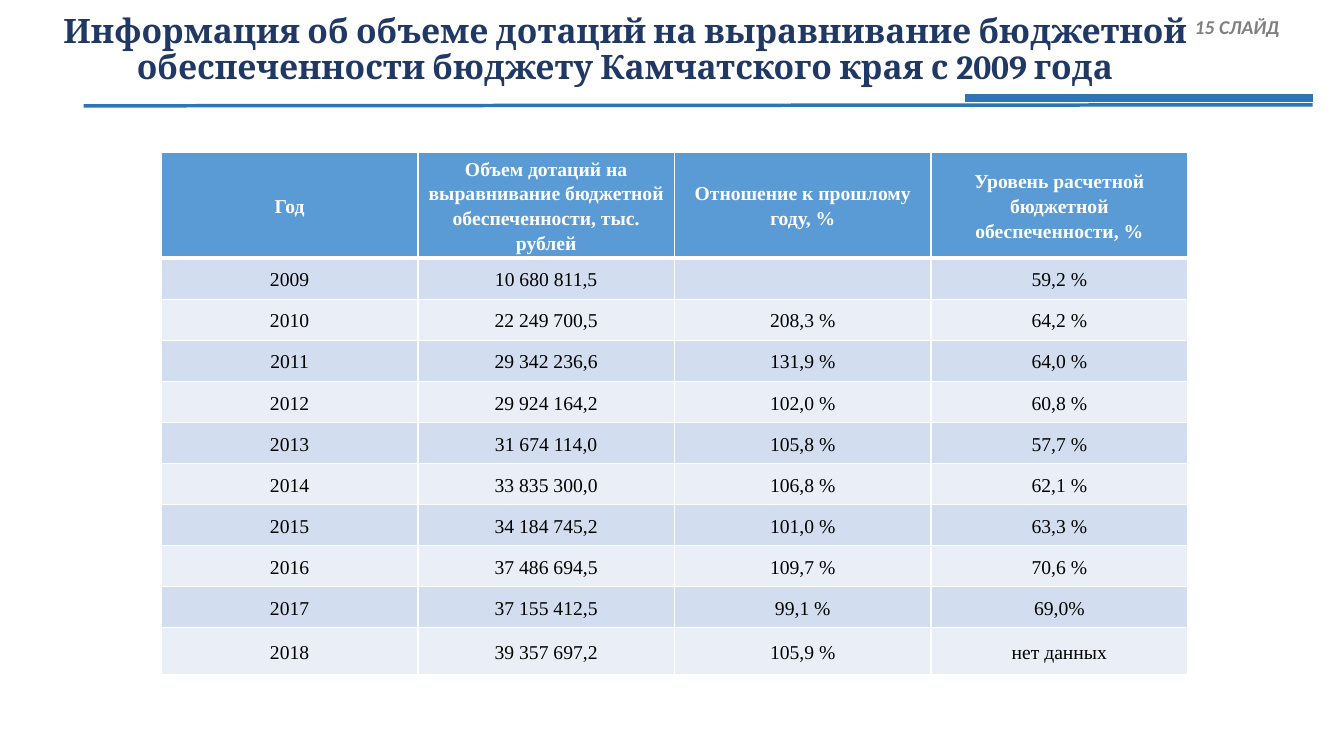
from dataclasses import dataclass

from lxml import etree
from pptx import Presentation
from pptx import util as u
from pptx.dml.color import RGBColor
from pptx.enum import shapes, text
from pptx.oxml import ns


@dataclass(frozen=True)
class Theme:
    title: str = "203864"
    rule: str = "2E75B6"
    header: str = "5B9BD5"
    bands: tuple = ("D2DEEF", "EAEFF7")
    white: str = "FFFFFF"
    black: str = "000000"
    grey: str = "808080"
    title_font: str = "Cambria"
    table_font: str = "Times New Roman"
    number_font: str = "Calibri"
    title_size: int = 24
    text_size: int = 14


THEME = Theme()
TITLE = "Информация об объеме дотаций на выравнивание бюджетной обеспеченности бюджету Камчатского края с 2009 года"
HEADINGS = (
    "Год",
    "Объем дотаций на выравнивание бюджетной обеспеченности, тыс. рублей",
    "Отношение к прошлому году, %",
    "Уровень расчетной бюджетной обеспеченности, %",
)
GRANTS = (
    ("2009", "10 680 811,5", "", "59,2 %"),
    ("2010", "22 249 700,5", "208,3 %", "64,2 %"),
    ("2011", "29 342 236,6", "131,9 %", "64,0 %"),
    ("2012", "29 924 164,2", "102,0 %", "60,8 %"),
    ("2013", "31 674 114,0", "105,8 %", "57,7 %"),
    ("2014", "33 835 300,0", "106,8 %", "62,1 %"),
    ("2015", "34 184 745,2", "101,0 %", "63,3 %"),
    ("2016", "37 486 694,5", "109,7 %", "70,6 %"),
    ("2017", "37 155 412,5", "99,1 %", "69,0%"),
    ("2018", "39 357 697,2", "105,9 %", "нет данных"),
)


def apply(target, **values):
    for name, value in values.items():
        setattr(target, name, value)


def write(paragraph, words, color, **font_values):
    run = paragraph.add_run()
    run.text = words
    apply(run.font, **font_values)
    run.font.color.rgb = RGBColor.from_string(color)


def add_title(slide, left, top, width, height):
    title = slide.shapes.title
    apply(title, left=u.Inches(left), top=u.Inches(top),
          width=u.Inches(width), height=u.Inches(height))
    apply(title.text_frame, word_wrap=True, vertical_anchor=text.MSO_ANCHOR.MIDDLE)
    paragraph = title.text_frame.paragraphs[0]
    apply(paragraph, alignment=text.PP_ALIGN.CENTER, line_spacing=0.9)
    write(paragraph, TITLE, THEME.title, name=THEME.title_font,
          size=u.Pt(THEME.title_size), bold=True)


def add_slide_number(slide, left, top, width, height):
    box = slide.shapes.add_textbox(*map(u.Inches, (left, top, width, height)))
    box.text_frame.word_wrap = False
    paragraph = box.text_frame.paragraphs[0]
    paragraph.alignment = text.PP_ALIGN.RIGHT
    write(paragraph, "15 СЛАЙД", THEME.grey, name=THEME.number_font,
          size=u.Pt(THEME.text_size), bold=True, italic=True)


def add_rules(slide, left, top, width, height):
    """Draw the long thin rule and the short thick one above its right end."""
    right, bottom = left + width, top + height
    lines = (
        (left, bottom, right, bottom - 0.01, 2.5),
        (right - 3.45, top, right, top, 6),
    )
    for *ends, weight in lines:
        line = slide.shapes.add_connector(
            shapes.MSO_CONNECTOR.STRAIGHT, *map(u.Inches, ends))
        line.line.width = u.Pt(weight)
        line.line.color.rgb = RGBColor.from_string(THEME.rule)
        etree.SubElement(line._element.spPr, ns.qn("a:effectLst"))


def add_borders(cell, **weights):
    """Give the cell white borders; must run before the cell is filled."""
    properties = cell._tc.get_or_add_tcPr()
    for side in "LRTB":
        border = etree.SubElement(properties, ns.qn(f"a:ln{side}"),
                                  w=str(u.Pt(weights.get(side, 1))))
        fill = etree.SubElement(border, ns.qn("a:solidFill"))
        etree.SubElement(fill, ns.qn("a:srgbClr"), val=THEME.white)


def format_cell(cell, words, fill, color, bold, **border_weights):
    add_borders(cell, **border_weights)
    cell.fill.solid()
    cell.fill.fore_color.rgb = RGBColor.from_string(fill)
    apply(cell, margin_left=u.Inches(0.07), margin_right=u.Inches(0.07),
          margin_top=0, margin_bottom=0, vertical_anchor=text.MSO_ANCHOR.MIDDLE)
    paragraph = cell.text_frame.paragraphs[0]
    apply(paragraph, alignment=text.PP_ALIGN.CENTER, line_spacing=1.15)
    if words:
        write(paragraph, words, color, name=THEME.table_font,
              size=u.Pt(THEME.text_size), bold=bold)


def add_grants_table(slide, left, top, width, height):
    rows = (HEADINGS, *GRANTS)
    table = slide.shapes.add_table(
        len(rows), len(HEADINGS), *map(u.Inches, (left, top, width, height))).table
    header_height, last_height = 1.05, 0.47
    middle_height = (height - header_height - last_height) / (len(rows) - 2)
    heights = [header_height, *[middle_height] * (len(rows) - 2), last_height]
    for index, (row, words) in enumerate(zip(table.rows, rows)):
        row.height = u.Inches(heights[index])
        if index == 0:
            style = dict(fill=THEME.header, color=THEME.white, bold=True, B=3)
        else:
            style = dict(fill=THEME.bands[(index - 1) % 2], color=THEME.black,
                         bold=False, T=3 if index == 1 else 1)
        for cell, value in zip(row.cells, words):
            format_cell(cell, value, **style)


def main():
    presentation = Presentation()
    apply(presentation, slide_width=u.Inches(13.33), slide_height=u.Inches(7.5))
    slide = presentation.slides.add_slide(
        presentation.slide_layouts.get_by_name("Title Only"))
    add_title(slide, 0.2, 0.02, 12, 0.96)
    add_grants_table(slide, 1.6, 1.51, 10.18, 5.19)
    add_slide_number(slide, 11.61, 0.1, 1.18, 0.34)
    add_rules(slide, 0.83, 0.97, 12.19, 0.08)
    presentation.save("out.pptx")


if __name__ == "__main__":
    main()
